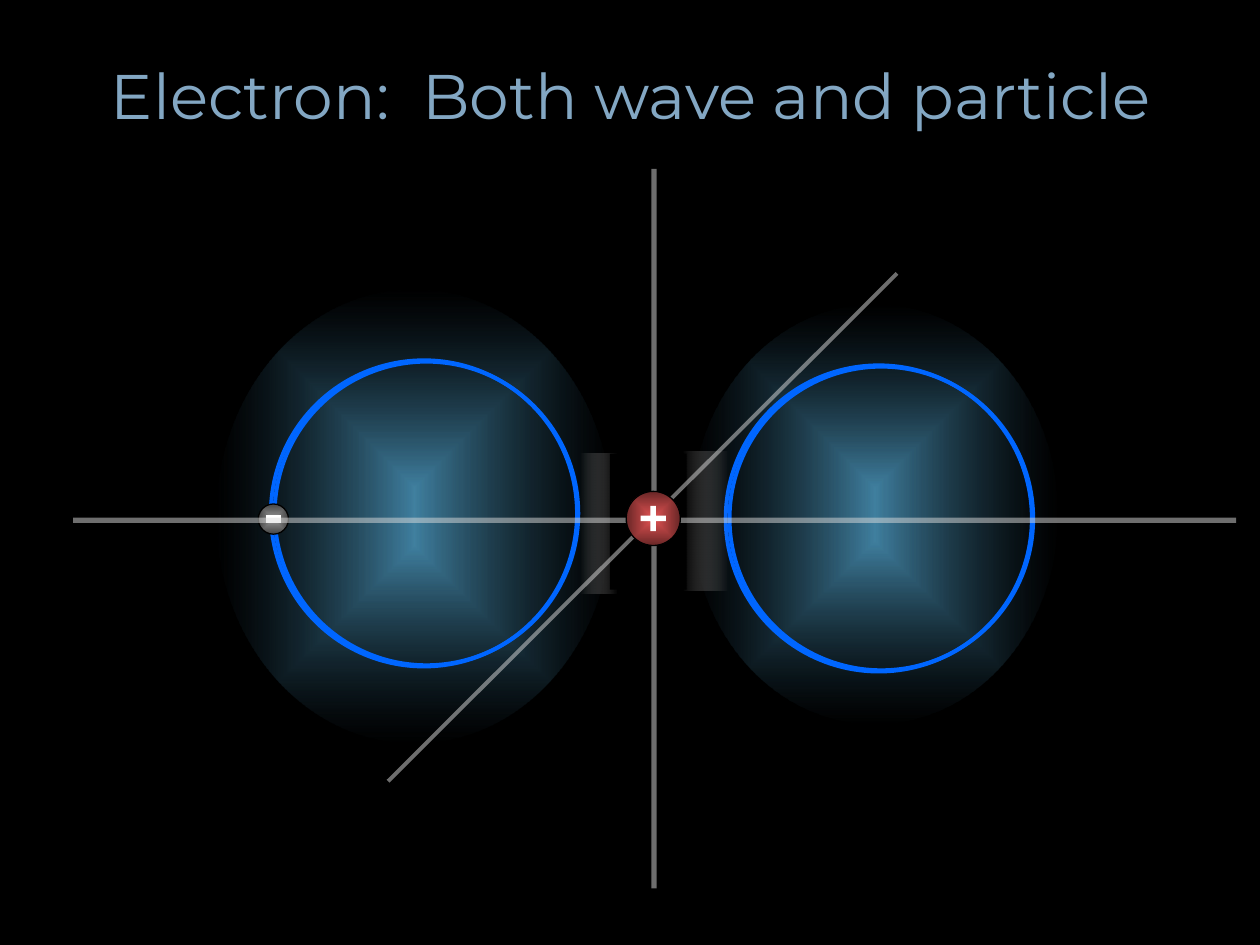
import pptx
import pptx.util
import pptx.dml.color
import pptx.enum.shapes
import pptx.enum.text
import pptx.oxml
import pptx.oxml.ns
from pptx.util import Inches

RGBColor = pptx.dml.color.RGBColor
SHAPES = pptx.enum.shapes.MSO_SHAPE

BLACK = RGBColor(0x00, 0x00, 0x00)
WHITE = RGBColor(0xFF, 0xFF, 0xFF)
TITLE_BLUE = RGBColor(0x83, 0xA7, 0xC3)
RING_BLUE = RGBColor(0x00, 0x66, 0xFF)
GLOW_CORE = RGBColor(0x66, 0xCC, 0xFF)
GLOW_EDGE = RGBColor(0x2F, 0x5E, 0x76)
ELECTRON_CORE = RGBColor(0x96, 0x96, 0x96)
ELECTRON_EDGE = RGBColor(0x45, 0x45, 0x45)
NUCLEUS_CORE = RGBColor(0xE3, 0x53, 0x53)
NUCLEUS_EDGE = RGBColor(0x69, 0x26, 0x26)
SHADE_GRAY = RGBColor(0xA1, 0xA1, 0xA1)
AXIS_GRAY = RGBColor(0xDD, 0xDD, 0xDD)

CENTRED = ('<a:path path="shape"><a:fillToRect l="50000" t="50000" '
           'r="50000" b="50000"/></a:path>')
ACROSS = '<a:lin ang="0" scaled="0"/>'


def add_part(shapes, kind, box, fill=None, line=None, width=0.75):
    part = shapes.add_shape(kind, *map(Inches, box))
    part.shadow.inherit = False
    if fill is None:
        part.fill.background()
    else:
        part.fill.solid()
        part.fill.fore_color.rgb = fill
    if line is None:
        part.line.fill.background()
    else:
        part.line.color.rgb = line
        part.line.width = pptx.util.Pt(width)
    return part


def set_gradient(part, stops, direction):
    stop_xml = "".join(
        f'<a:gs pos="{position * 1000}"><a:srgbClr val="{color}">'
        f'<a:alpha val="{opacity * 1000}"/></a:srgbClr></a:gs>'
        for position, (color, opacity) in zip((0, 100), stops))
    gradient = pptx.oxml.parse_xml(
        f'<a:gradFill {pptx.oxml.ns.nsdecls("a")} rotWithShape="1">'
        f'<a:gsLst>{stop_xml}</a:gsLst>{direction}</a:gradFill>')
    properties = part._element.spPr
    old_fill = properties.find(pptx.oxml.ns.qn("a:noFill"))
    properties.replace(old_fill, gradient)


def add_line(shapes, start, end, color, width, opacity=100):
    line = shapes.add_connector(pptx.enum.shapes.MSO_CONNECTOR.STRAIGHT,
                                *map(Inches, (*start, *end)))
    line.line.color.rgb = color
    line.line.width = pptx.util.Pt(width)
    properties = line._element.spPr
    properties.append(pptx.oxml.parse_xml(
        f'<a:effectLst {pptx.oxml.ns.nsdecls("a")}/>'))
    if opacity < 100:
        ink = properties.find(".//" + pptx.oxml.ns.qn("a:srgbClr"))
        ink.append(pptx.oxml.parse_xml(
            f'<a:alpha {pptx.oxml.ns.nsdecls("a")} val="{opacity * 1000}"/>'))


def add_title(slide, box):
    title = slide.shapes.add_textbox(*map(Inches, box))
    title.text_frame.word_wrap = False
    heading = title.text_frame.paragraphs[0]
    heading.text = "Electron:  Both wave and particle"
    heading.alignment = pptx.enum.text.PP_ALIGN.CENTER
    heading.font.name = "Montserrat"
    heading.font.size = pptx.util.Pt(36)
    heading.font.color.rgb = TITLE_BLUE


def add_orbital(slide, box, inner_ring, outer_ring):
    left, top, width, height = box
    glow = add_part(slide.shapes, SHAPES.OVAL, box)
    set_gradient(glow, [(GLOW_CORE, 62), (GLOW_EDGE, 0)], CENTRED)
    for (dx, dy), size in ((inner_ring, 2.41), (outer_ring, 2.43)):
        add_part(slide.shapes, SHAPES.OVAL, (left + dx, top + dy, size, size),
                 line=RING_BLUE, width=2.25)


def add_charge(shapes, box, core, edge):
    ball = add_part(shapes, SHAPES.OVAL, box, line=BLACK)
    set_gradient(ball, [(core, 100), (edge, 100)], CENTRED)


def add_electron(slide, box):
    left, top, size, _ = box
    electron = slide.shapes.add_group_shape()
    add_charge(electron.shapes, box, ELECTRON_CORE, ELECTRON_EDGE)
    middle = top + size / 2
    add_line(electron.shapes, (left + size / 4, middle),
             (left + size * 3 / 4, middle), WHITE, 4.5)


def add_nucleus(slide, box):
    left, top, size, _ = box
    nucleus = slide.shapes.add_group_shape()
    add_charge(nucleus.shapes, box, NUCLEUS_CORE, NUCLEUS_EDGE)
    arm = 0.2
    inset = (size - arm) / 2
    plus = add_part(nucleus.shapes, SHAPES.CROSS,
                    (left + inset, top + inset, arm, arm), fill=WHITE)
    plus.adjustments[0] = 0.39


def add_gap(slide, box):
    left, top, width, height = box
    dark, clear = (BLACK, 100), (SHADE_GRAY, 0)
    for shade_box, stops in (
            ((left + 0.81, top - 0.02, 0.35, height), [dark, clear]),
            ((left, top, 0.29, height), [clear, dark])):
        shade = add_part(slide.shapes, SHAPES.RECTANGLE, shade_box)
        set_gradient(shade, stops, ACROSS)
    add_part(slide.shapes, SHAPES.RECTANGLE,
             (left + 0.23, top, 0.61, height - 0.03), fill=BLACK)


def add_axes(slide, box):
    left, top, width, height = box
    right, bottom = left + width, top + height
    across, down = top + 2.79, left + 4.61
    for start, end, weight in (
            ((left, across), (right, across), 3),
            ((down, bottom), (down, top), 3),
            ((left + 2.5, top + 4.86), (left + 6.54, top + 0.83), 2.25)):
        add_line(slide.shapes, start, end, AXIS_GRAY, weight, opacity=50)


def main():
    deck = pptx.Presentation()
    deck.slide_width, deck.slide_height = Inches(10), Inches(7.5)
    slide = deck.slides.add_slide(deck.slide_layouts[6])
    slide.background.fill.solid()
    slide.background.fill.fore_color.rgb = BLACK

    add_orbital(slide, (1.72, 2.3, 3.13, 3.59), (0.46, 0.57), (0.43, 0.56))
    add_title(slide, (0.7, 0.4, 8.61, 0.71))
    add_orbital(slide, (5.49, 2.42, 2.9, 3.32), (0.3, 0.49), (0.27, 0.48))
    add_electron(slide, (2.05, 4, 0.24, 0.24))
    add_gap(slide, (4.61, 3.6, 0.84, 1.11))
    add_axes(slide, (0.58, 1.34, 9.23, 5.71))
    add_nucleus(slide, (4.97, 3.9, 0.43, 0.43))
    deck.save("out.pptx")


if __name__ == "__main__":
    main()
